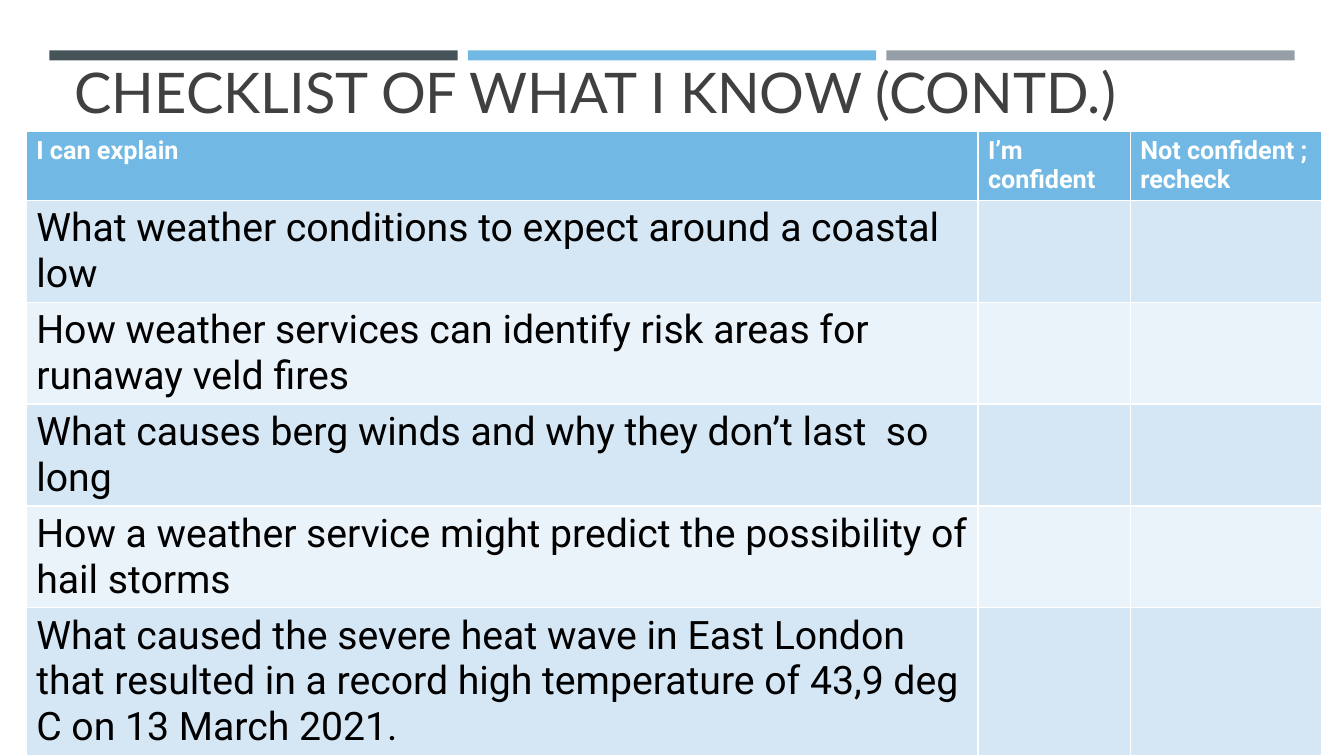
from pptx import Presentation
from pptx.dml.color import RGBColor
from pptx.enum.shapes import MSO_SHAPE
from pptx.enum.text import MSO_ANCHOR, MSO_AUTO_SIZE, PP_ALIGN
from pptx.util import Inches, Pt

RECT = MSO_SHAPE.RECTANGLE
BOTTOM = MSO_ANCHOR.BOTTOM
NO_FIT = MSO_AUTO_SIZE.NONE
LEFT = PP_ALIGN.LEFT

BLUE = "71B9E4"
BANDS = ["D5E6F5", "EBF3FA"]
BAR_COLORS = ["465359", BLUE, "969FA7"]
COL_WIDTHS = [9.44, 1.51, 1.9]
ROW_HEIGHTS = [0.66, 0.98, 0.98, 0.98, 0.98, 1.42]
HEADINGS = ["I can explain", "I’m confident", "Not confident ; recheck"]
TOPICS = [
    "What weather conditions to expect around a coastal low",
    "How weather services can identify risk areas for runaway veld fires",
    "What causes berg winds and why they don’t last  so long",
    "How a weather service might predict the possibility of hail storms",
    "What caused the severe heat wave in East London that resulted in a "
    "record high temperature of 43,9 deg C on 13 March 2021.",
]


def rgb(color):
    return RGBColor.from_string(color)


def add_run(p, text, font, size, color, bold=False):
    r = p.add_run()
    r.text = text
    r.font.name = font
    r.font.size = Pt(size)
    r.font.bold = bold
    r.font.color.rgb = rgb(color)


def add_bar(s, left, color):
    sp = s.shapes.add_shape(RECT, Inches(left), Inches(0.5), Inches(4.05), Inches(0.1))
    sp.shadow.inherit = False
    sp.fill.solid()
    sp.fill.fore_color.rgb = rgb(color)
    sp.line.fill.background()


def set_title(s, text):
    sp = s.shapes.title
    sp.left, sp.top = Inches(0.64), Inches(0.52)
    sp.width, sp.height = Inches(12.06), Inches(0.77)
    tf = sp.text_frame
    tf.auto_size = NO_FIT
    tf.word_wrap = True
    tf.vertical_anchor = BOTTOM
    p = tf.paragraphs[0]
    p.alignment = LEFT
    add_run(p, text, "Lato", 40, "404040")


def fill_cell(cell, color):
    cell.fill.solid()
    cell.fill.fore_color.rgb = rgb(color)


def add_checklist(s):
    frame = s.shapes.add_table(
        len(ROW_HEIGHTS), len(COL_WIDTHS), Inches(0.26), Inches(1.3),
        Inches(sum(COL_WIDTHS)), Inches(sum(ROW_HEIGHTS)))
    table = frame.table
    for column, width in zip(table.columns, COL_WIDTHS):
        column.width = Inches(width)
    for row, height in zip(table.rows, ROW_HEIGHTS):
        row.height = Inches(height)
    for cell, heading in zip(table.rows[0].cells, HEADINGS):
        fill_cell(cell, BLUE)
        add_run(cell.text_frame.paragraphs[0], heading, "Roboto", 18, "FFFFFF", True)
    for i, topic in enumerate(TOPICS):
        cells = table.rows[i + 1].cells
        for cell in cells:
            fill_cell(cell, BANDS[i % 2])
        add_run(cells[0].text_frame.paragraphs[0], topic, "Roboto", 28, "000000")


def main():
    prs = Presentation()
    prs.slide_width, prs.slide_height = Inches(13.33), Inches(7.5)
    s = prs.slides.add_slide(prs.slide_layouts[5])
    for i, color in enumerate(BAR_COLORS):
        add_bar(s, 0.49 + 4.15 * i, color)
    set_title(s, "CHECKLIST OF WHAT I KNOW (CONTD.)")
    add_checklist(s)
    prs.save("out.pptx")


if __name__ == "__main__":
    main()
